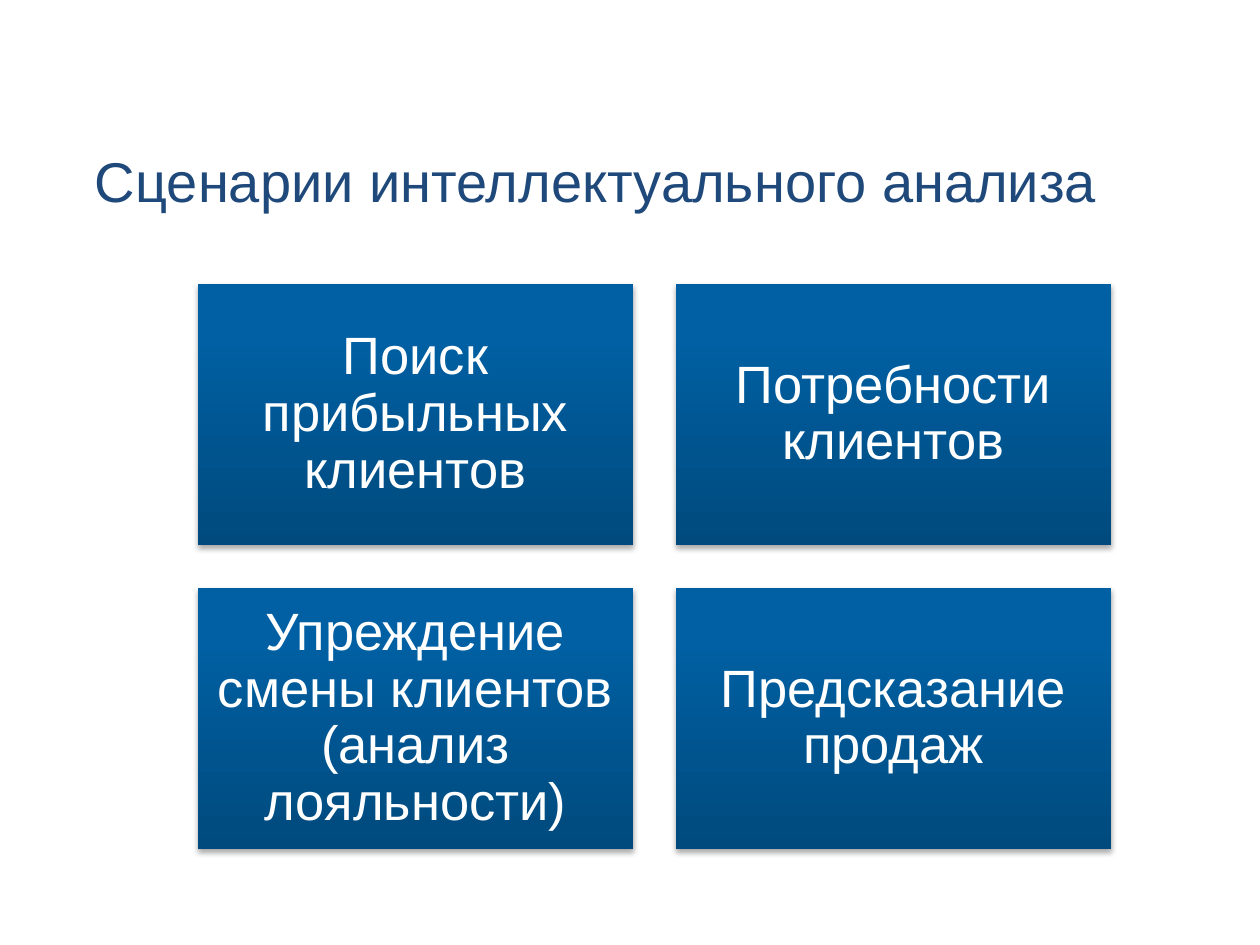
from dataclasses import dataclass

from lxml.etree import _Element
from pptx import Presentation
from pptx.dml.color import RGBColor
from pptx.enum.shapes import MSO_SHAPE
from pptx.enum.text import MSO_ANCHOR, PP_ALIGN
from pptx.oxml import parse_xml
from pptx.oxml.ns import nsdecls
from pptx.slide import Slide
from pptx.text.text import TextFrame
from pptx.util import Emu, Pt

EMU_PER_PX = 914400 / 126
FONT = "Arial"
COLORS = {
    "title": "1F497A",
    "tile_text": "FFFFFF",
    "tile_bottom": "004A7D",
    "tile_middle": "0060A3",
    "tile_top": "0061A4",
    "shadow": "000000",
}

# Tile grid, in px
GRID_LEFT, GRID_TOP = 198, 284
TILE_WIDTH, TILE_HEIGHT = 435, 261
GAP = 43
COLUMNS = 2


@dataclass(frozen=True)
class Tile:
    text: str
    left: int
    top: int


SCENARIOS = [
    "Поиск прибыльных клиентов",
    "Потребности клиентов",
    "Упреждение смены клиентов (анализ лояльности)",
    "Предсказание продаж",
]


def px(value: int) -> Emu:
    return Emu(round(value * EMU_PER_PX))


def set_margins(frame: TextFrame, margin: int) -> None:
    frame.margin_left = frame.margin_right = px(margin)
    frame.margin_top = frame.margin_bottom = px(margin)


def write_text(frame: TextFrame, text: str, size: int, color: str,
               alignment: PP_ALIGN) -> None:
    frame.word_wrap = True
    paragraph = frame.paragraphs[0]
    paragraph.alignment = alignment
    run = paragraph.add_run()
    run.text = text
    run.font.name = FONT
    run.font.size = Pt(size)
    run.font.color.rgb = RGBColor.from_string(COLORS[color])


def gradient_fill() -> _Element:
    stops = [(0, "tile_bottom"), (80, "tile_middle"), (100, "tile_top")]
    stop_xml = "".join(
        f'<a:gs pos="{position * 1000}"><a:srgbClr val="{COLORS[name]}"/></a:gs>'
        for position, name in stops
    )
    return parse_xml(
        f'<a:gradFill {nsdecls("a")} rotWithShape="1"><a:gsLst>{stop_xml}</a:gsLst>'
        '<a:lin ang="16200000" scaled="0"/></a:gradFill>'
    )


def soft_shadow() -> _Element:
    return parse_xml(
        f'<a:effectLst {nsdecls("a")}><a:outerShdw blurRad="40000" dist="23000" '
        f'dir="5400000" rotWithShape="0"><a:srgbClr val="{COLORS["shadow"]}">'
        '<a:alpha val="35000"/></a:srgbClr></a:outerShdw></a:effectLst>'
    )


def draw_title(slide: Slide, text: str) -> None:
    title = slide.shapes.title
    title.left, title.top = px(95), px(147)
    title.width, title.height = px(1071), px(95)
    frame = title.text_frame
    set_margins(frame, 0)
    frame.vertical_anchor = MSO_ANCHOR.TOP
    write_text(frame, text, 32, "title", PP_ALIGN.LEFT)


def draw_tile(slide: Slide, tile: Tile) -> None:
    shape = slide.shapes.add_shape(
        MSO_SHAPE.RECTANGLE, px(tile.left), px(tile.top),
        px(TILE_WIDTH), px(TILE_HEIGHT))
    shape.line.fill.background()

    # Fill goes right after the geometry, the shadow after the line
    properties = shape._element.spPr
    properties.insert(2, gradient_fill())
    properties.append(soft_shadow())

    frame = shape.text_frame
    set_margins(frame, 15)
    frame.vertical_anchor = MSO_ANCHOR.MIDDLE
    write_text(frame, tile.text, 30, "tile_text", PP_ALIGN.CENTER)
    frame.paragraphs[0].line_spacing = 0.9


def main() -> None:
    presentation = Presentation()
    presentation.slide_width, presentation.slide_height = px(1260), px(945)
    slide = presentation.slides.add_slide(presentation.slide_layouts[5])

    draw_title(slide, "Сценарии интеллектуального анализа")

    # Scenario tiles, row by row
    for index, text in enumerate(SCENARIOS):
        row, column = divmod(index, COLUMNS)
        draw_tile(slide, Tile(
            text,
            GRID_LEFT + column * (TILE_WIDTH + GAP),
            GRID_TOP + row * (TILE_HEIGHT + GAP),
        ))

    presentation.save("out.pptx")


if __name__ == "__main__":
    main()
